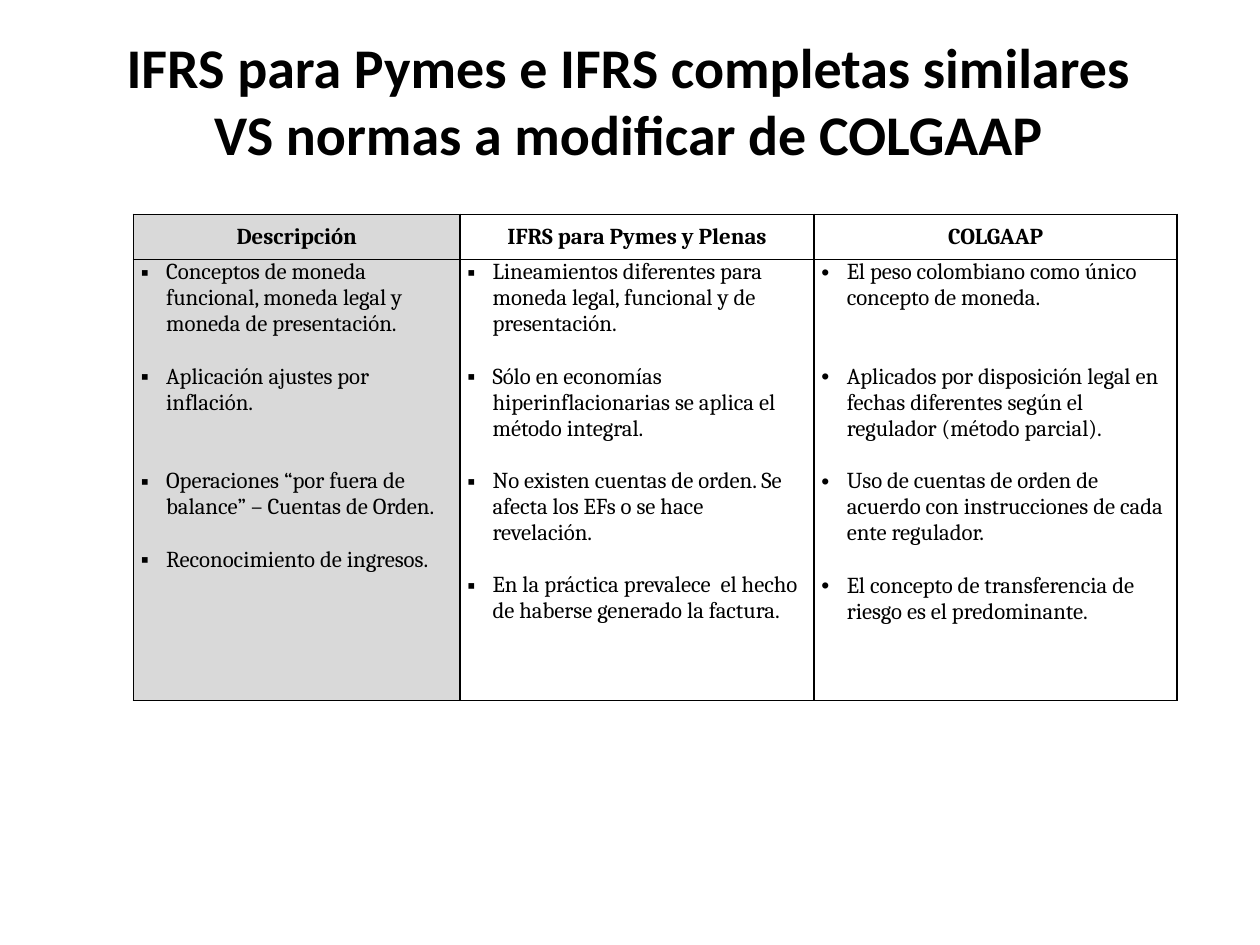
from dataclasses import dataclass

from lxml import etree
from pptx import Presentation, util as u
from pptx.dml.color import RGBColor
from pptx.enum import text
from pptx.oxml import ns

BLACK = RGBColor(0x00, 0x00, 0x00)
WHITE = RGBColor(0xFF, 0xFF, 0xFF)
GREY = RGBColor(0xD9, 0xD9, 0xD9)

BODY_SIZE = u.Pt(13)
LINE_PITCH = 15  # points taken by one line of body text
HEADER_GAP = u.Pt(2.6)
HANGING = u.Cm(0.51)


@dataclass(frozen=True)
class Item:
    wording: str
    lines_before: int = 1


@dataclass(frozen=True)
class Column:
    heading: str
    width: u.Length
    bullet: str
    items: tuple[Item, ...]
    fill: RGBColor | None = None


COLUMNS = (
    Column("Descripción", u.Cm(6.58), "▪", (
        Item("Conceptos de moneda funcional, moneda legal y moneda de presentación.", 0),
        Item("Aplicación ajustes por inflación."),
        Item("Operaciones “por fuera de balance” – Cuentas de Orden.", 2),
        Item("Reconocimiento de ingresos."),
    ), GREY),
    Column("IFRS para Pymes y Plenas", u.Cm(7.14), "▪", (
        Item("Lineamientos diferentes para moneda legal, funcional y de presentación.", 0),
        Item("Sólo en economías hiperinflacionarias se aplica el método integral."),
        Item("No existen cuentas de orden. Se afecta los EFs o se hace revelación."),
        Item("En la práctica prevalece  el hecho de haberse generado la factura."),
    )),
    Column("COLGAAP", u.Cm(7.32), "•", (
        Item("El peso colombiano como único concepto de moneda.", 0),
        Item("Aplicados por disposición legal en fechas diferentes según el "
             "regulador (método parcial).", 2),
        Item("Uso de cuentas de orden de acuerdo con instrucciones de cada ente regulador."),
        Item("El concepto de transferencia de riesgo es el predominante."),
    )),
)


def style_font(paragraph, name: str, size: u.Length, bold: bool) -> None:
    for run in paragraph.runs:
        run.font.name = name
        run.font.size = size
        run.font.bold = bold
        run.font.color.rgb = BLACK


def add_bullet(paragraph, char: str) -> None:
    properties = paragraph._p.get_or_add_pPr()
    properties.set("marL", str(HANGING))
    properties.set("indent", str(-HANGING))
    etree.SubElement(properties, ns.qn("a:buFont"), typeface="Arial")
    etree.SubElement(properties, ns.qn("a:buChar"), char=char)


def format_cell(cell, fill: RGBColor | None) -> None:
    cell.margin_left = cell.margin_right = u.Cm(0.15)
    cell.margin_top = cell.margin_bottom = 0
    # Borders have to precede the fill in the cell properties
    properties = cell._tc.get_or_add_tcPr()
    for side in ("lnL", "lnR", "lnT", "lnB"):
        border = etree.SubElement(properties, ns.qn(f"a:{side}"), w=str(u.Pt(1)))
        solid = etree.SubElement(border, ns.qn("a:solidFill"))
        etree.SubElement(solid, ns.qn("a:srgbClr"), val=str(BLACK))
    if fill is None:
        cell.fill.background()
    else:
        cell.fill.solid()
        cell.fill.fore_color.rgb = fill


def fill_heading(cell, column: Column) -> None:
    format_cell(cell, column.fill)
    cell.vertical_anchor = text.MSO_ANCHOR.MIDDLE
    heading = cell.text_frame.paragraphs[0]
    heading.text = column.heading
    heading.alignment = text.PP_ALIGN.CENTER
    heading.space_after = HEADER_GAP
    style_font(heading, "Cambria", BODY_SIZE, True)


def fill_items(cell, column: Column) -> None:
    format_cell(cell, column.fill)
    cell.vertical_anchor = text.MSO_ANCHOR.TOP
    frame = cell.text_frame
    frame.text = "\n".join(item.wording for item in column.items)
    for paragraph, item in zip(frame.paragraphs, column.items):
        add_bullet(paragraph, column.bullet)
        if item.lines_before:
            paragraph.space_before = u.Pt(item.lines_before * LINE_PITCH)
        style_font(paragraph, "Cambria", BODY_SIZE, False)


def add_title(slide) -> None:
    title = slide.shapes.add_textbox(u.Cm(0.71), u.Cm(0.74), u.Cm(23.93), u.Cm(2.54))
    title.fill.solid()
    title.fill.fore_color.rgb = WHITE
    frame = title.text_frame
    frame.word_wrap = True
    frame.vertical_anchor = text.MSO_ANCHOR.MIDDLE
    heading = frame.paragraphs[0]
    heading.text = ("IFRS para Pymes e IFRS completas similares\v"
                    "VS normas a modificar de COLGAAP")
    heading.alignment = text.PP_ALIGN.CENTER
    style_font(heading, "Calibri", u.Pt(32), True)


def add_comparison(slide) -> None:
    heights = (u.Cm(0.91), u.Cm(8.89))
    width = sum(column.width for column in COLUMNS)
    comparison = slide.shapes.add_table(
        len(heights), len(COLUMNS), u.Cm(2.69), u.Cm(4.32), width, sum(heights)).table
    comparison.first_row = comparison.horz_banding = False
    for row, height in zip(comparison.rows, heights):
        row.height = height
    for index, column in enumerate(COLUMNS):
        comparison.columns[index].width = column.width
        fill_heading(comparison.cell(0, index), column)
        fill_items(comparison.cell(1, index), column)


def main() -> None:
    deck = Presentation()
    deck.slide_width, deck.slide_height = u.Cm(25.4), u.Cm(19.05)
    slide = deck.slides.add_slide(deck.slide_layouts[6])
    add_title(slide)
    add_comparison(slide)
    deck.save("out.pptx")


if __name__ == "__main__":
    main()
